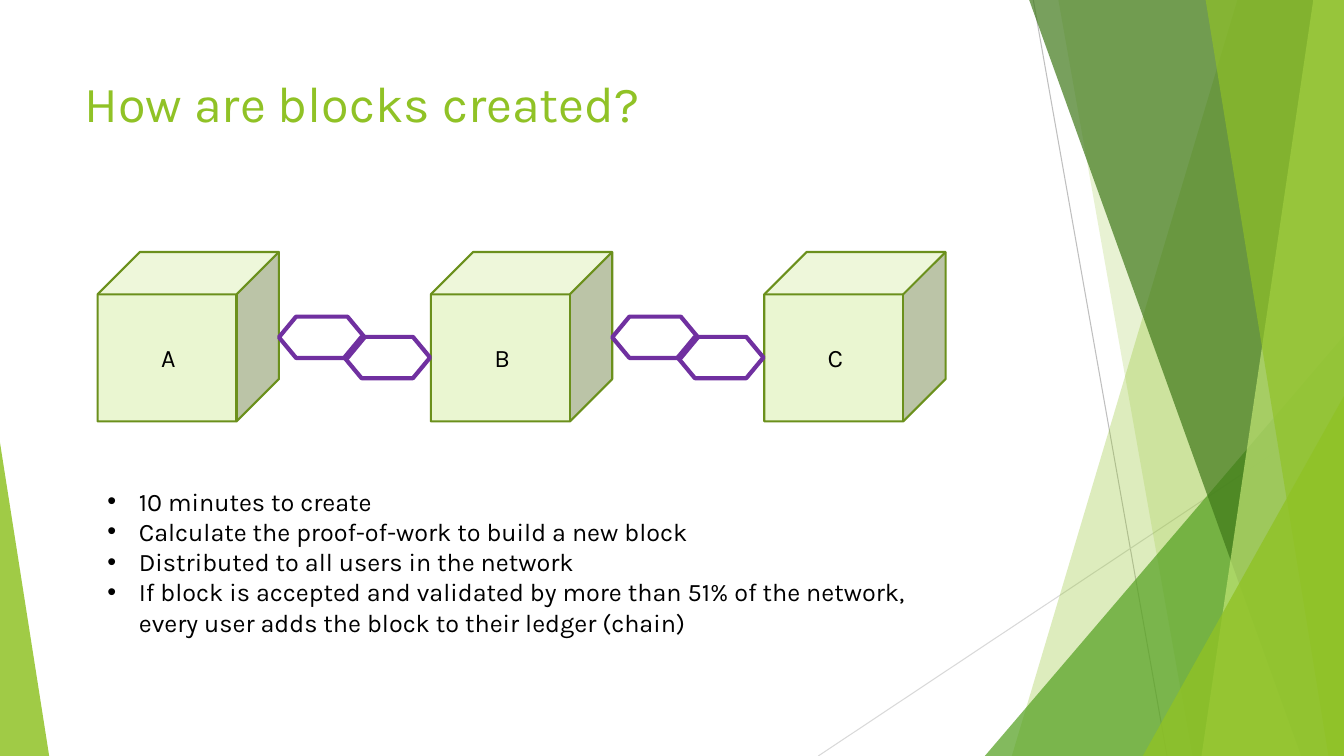
from lxml import etree
from pptx import Presentation
from pptx.dml.color import RGBColor
from pptx.enum.shapes import MSO_CONNECTOR, MSO_SHAPE
from pptx.enum.text import MSO_ANCHOR, MSO_AUTO_SIZE, PP_ALIGN
from pptx.oxml.ns import qn
from pptx.util import Cm, Pt

STRAIGHT = MSO_CONNECTOR.STRAIGHT
TRIANGLE = MSO_SHAPE.ISOSCELES_TRIANGLE
CUBE = MSO_SHAPE.CUBE
HEXAGON = MSO_SHAPE.FLOWCHART_PREPARATION
LEFT = PP_ALIGN.LEFT
TOP = MSO_ANCHOR.TOP
FIT_TEXT = MSO_AUTO_SIZE.SHAPE_TO_FIT_TEXT

BLACK = RGBColor(0x00, 0x00, 0x00)
LIME = RGBColor(0x90, 0xC2, 0x26)
PALE_LIME = RGBColor(0xC0, 0xE4, 0x74)
GREEN = RGBColor(0x54, 0xA0, 0x21)
FOREST = RGBColor(0x3F, 0x78, 0x19)
BLOCK_FILL = RGBColor(0xEA, 0xF6, 0xD1)
BLOCK_EDGE = RGBColor(0x6B, 0x90, 0x1C)
PURPLE = RGBColor(0x70, 0x30, 0xA0)
GREY = RGBColor(0xBF, 0xBF, 0xBF)
LIGHT_GREY = RGBColor(0xD9, 0xD9, 0xD9)

WIDTH, HEIGHT = 33.87, 19.05
FONT = "Karla"

BLOCKS = ["A", "B", "C"]
BLOCK_LEFT, BLOCK_TOP, BLOCK_PITCH = 2.46, 6.35, 8.4
BLOCK_WIDTH, BLOCK_HEIGHT = 4.57, 4.27
LINK_TOP, LINK_WIDTH, LINK_HEIGHT = 7.98, 2.16, 1.04
LINK_STEP_X, LINK_STEP_Y = 1.65, 0.51

FACTS = [
    "10 minutes to create",
    "Calculate the proof-of-work to build a new block",
    "Distributed to all users in the network",
    "If block is accepted and validated by more than 51% of the network, "
    "every user adds the block to their ledger (chain)",
]


class SlideBuilder:
    """Draws on one slide; all lengths are in centimetres."""

    def __init__(self, slide, font):
        self.shapes = slide.shapes
        self.font = font

    def line(self, x1, y1, x2, y2, color):
        line = self.shapes.add_connector(STRAIGHT, Cm(x1), Cm(y1), Cm(x2), Cm(y2))
        line.line.color.rgb = color
        line.line.width = Pt(0.75)
        etree.SubElement(line._element.spPr, qn("a:effectLst"))

    def paint(self, shape, fill=None, opacity=100, edge=None, edge_width=0):
        shape.shadow.inherit = False
        if fill is None:
            shape.fill.background()
        else:
            shape.fill.solid()
            shape.fill.fore_color.rgb = fill
            if opacity < 100:
                color = shape._element.spPr.find(qn("a:solidFill"))[0]
                etree.SubElement(color, qn("a:alpha"), val=str(opacity * 1000))
        if edge is None:
            shape.line.fill.background()
        else:
            shape.line.color.rgb = edge
            shape.line.width = Pt(edge_width)

    def facet(self, top_x, bottom_x, color, opacity):
        """Band from a slanted left edge to the right side of the slide."""
        outline = self.shapes.build_freeform(Cm(top_x), Cm(-0.02))
        outline.add_line_segments([
            (Cm(WIDTH), Cm(-0.02)),
            (Cm(WIDTH), Cm(HEIGHT)),
            (Cm(bottom_x), Cm(HEIGHT)),
        ])
        self.paint(outline.convert_to_shape(), color, opacity)

    def preset(self, kind, left, top, width, height, **style):
        shape = self.shapes.add_shape(kind, Cm(left), Cm(top), Cm(width), Cm(height))
        self.paint(shape, **style)
        return shape

    def corner(self, left, width, height, apex, color, opacity):
        """Right triangle standing on the bottom edge of the slide."""
        triangle = self.preset(TRIANGLE, left, HEIGHT - height, width, height,
                               fill=color, opacity=opacity)
        triangle.adjustments[0] = apex

    def text(self, left, top, width, height, lines, size=18, color=BLACK, bullet=False):
        box = self.shapes.add_textbox(Cm(left), Cm(top), Cm(width), Cm(height))
        frame = box.text_frame
        frame.word_wrap = True
        frame.vertical_anchor = TOP
        frame.text = "\n".join(lines)
        for paragraph in frame.paragraphs:
            paragraph.alignment = LEFT
            paragraph.font.name = self.font
            paragraph.font.size = Pt(size)
            paragraph.font.color.rgb = color
            if bullet:
                self.add_bullet(paragraph)
        return frame

    def add_bullet(self, paragraph):
        properties = paragraph._p.get_or_add_pPr()
        properties.set("marL", str(Cm(0.79)))
        properties.set("indent", str(-Cm(0.79)))
        mark_font = etree.Element(qn("a:buFont"), typeface="Arial")
        mark = etree.Element(qn("a:buChar"), char="•")
        properties.insert(0, mark_font)
        properties.insert(1, mark)


def draw_backdrop(page):
    page.line(26.04, 0, 29.41, HEIGHT, GREY)
    page.line(WIDTH, 10.24, 20.62, HEIGHT, LIGHT_GREY)
    page.facet(31.19, 25.5, LIME, 30)
    page.facet(26.67, 30.05, LIME, 20)
    page.corner(24.82, 9.05, 10.59, 1, GREEN, 72)
    page.facet(25.93, 32.79, FOREST, 70)
    page.facet(33.1, 30.28, PALE_LIME, 70)
    page.facet(30.38, 33.48, LIME, 65)
    page.corner(28.8, 5.07, 9.07, 1, LIME, 80)
    page.corner(0, 1.24, 7.9, 0, LIME, 85)


def draw_chain(page):
    block_lefts = [BLOCK_LEFT + i * BLOCK_PITCH for i in range(len(BLOCKS))]
    for left in block_lefts:
        page.preset(CUBE, left, BLOCK_TOP, BLOCK_WIDTH, BLOCK_HEIGHT,
                    fill=BLOCK_FILL, edge=BLOCK_EDGE, edge_width=1.5)
    for left in block_lefts[:-1]:
        for step in range(2):
            page.preset(HEXAGON, left + BLOCK_WIDTH + step * LINK_STEP_X,
                        LINK_TOP + step * LINK_STEP_Y, LINK_WIDTH, LINK_HEIGHT,
                        edge=PURPLE, edge_width=3)
    for left, name in zip(block_lefts, BLOCKS):
        label = page.text(left + 1.35, 8.49, 1.55, 1.02, [name])
        label.auto_size = FIT_TEXT


def main():
    deck = Presentation()
    deck.slide_width, deck.slide_height = Cm(WIDTH), Cm(HEIGHT)
    page = SlideBuilder(deck.slides.add_slide(deck.slide_layouts[6]), FONT)
    draw_backdrop(page)
    page.text(1.88, 1.7, 23.88, 3.66, ["How are blocks created?"], size=36, color=LIME)
    draw_chain(page)
    facts = page.text(BLOCK_LEFT, 12.12, 21.67, 4.88, FACTS, bullet=True)
    facts.auto_size = FIT_TEXT
    deck.save("out.pptx")


if __name__ == "__main__":
    main()
